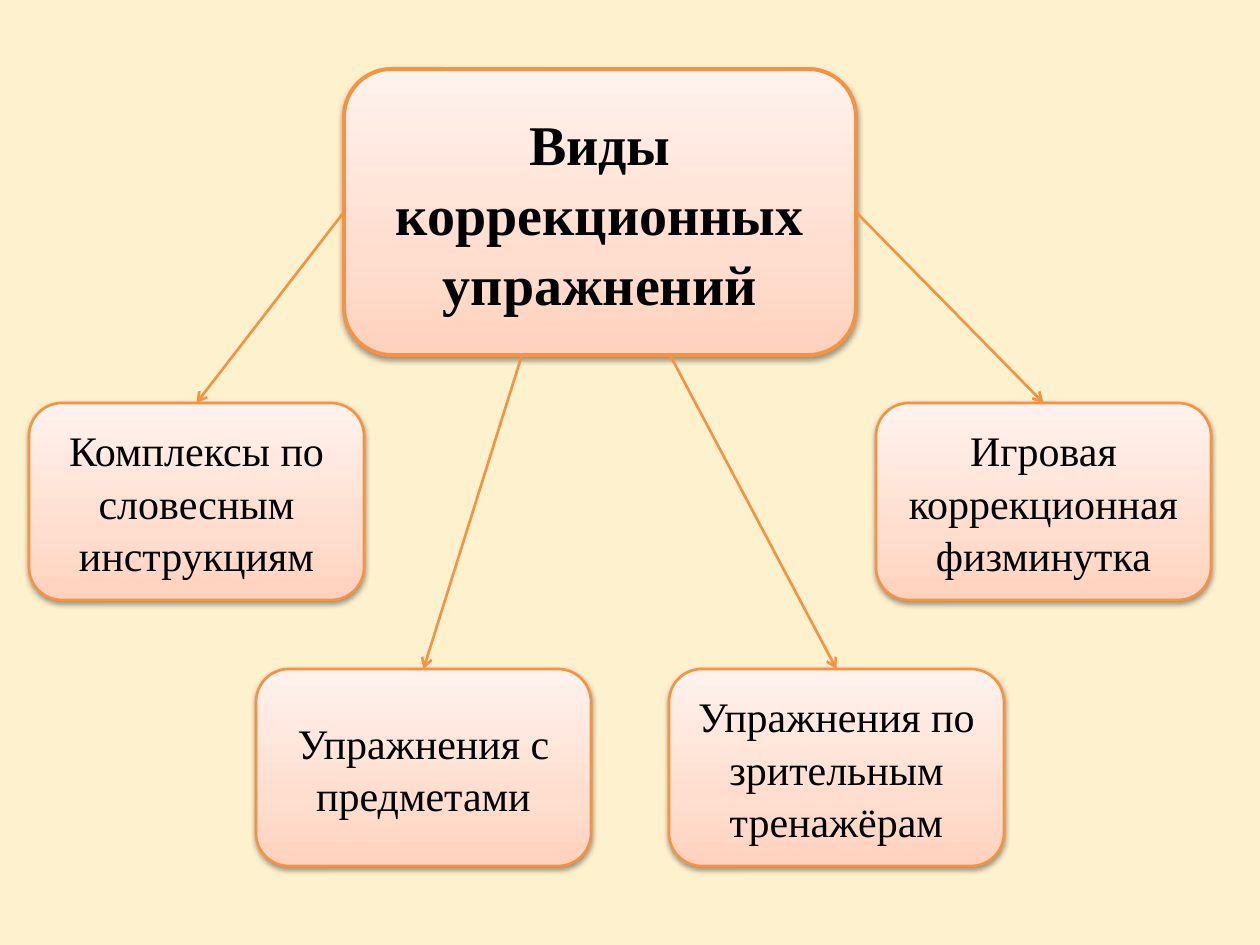
"""Build a slide with a title box and four linked kinds of exercise."""
from copy import deepcopy

from pptx import Presentation
from pptx.dml.color import RGBColor
from pptx.enum.shapes import MSO_CONNECTOR, MSO_SHAPE
from pptx.enum.text import MSO_ANCHOR, PP_ALIGN
from pptx.oxml import parse_xml
from pptx.oxml.ns import nsdecls
from pptx.util import Pt

SCALE = 914400 / 126
HEX = {"back": "FEF1CE", "low": "FFD2BD", "mid": "FFDED0", "high": "FFF2ED",
       "edge": "F69240", "ink": "000000"}
STOPS = [(0, "low"), (0.35, "mid"), (1, "high")]
WIDE, TALL = 335, 197


def emu(px):
    return round(px * SCALE)


def tint(name):
    return RGBColor.from_string(HEX[name])


def apply(target, style):
    for key, value in style.items():
        setattr(target, key, value)


class Board:
    frame = {"word_wrap": True, "vertical_anchor": MSO_ANCHOR.MIDDLE}
    para = {"alignment": PP_ALIGN.CENTER, "line_spacing": 1.04}
    font = {"name": "Times New Roman"}

    def __init__(self, deck):
        self.slide = deck.slides.add_slide(deck.slide_layouts[6])
        fill = self.slide.background.fill
        fill.solid()
        fill.fore_color.rgb = tint("back")

    def edge(self, line, width):
        line.color.rgb = tint("edge")
        line.width = Pt(width)

    def shade(self, shape):
        fill = shape.fill
        fill.gradient()
        fill.gradient_angle = 90
        first = fill.gradient_stops[0]._gs
        first.addnext(deepcopy(first))
        for stop, (place, name) in zip(fill.gradient_stops, STOPS):
            stop.position = place
            stop.color.rgb = tint(name)

    def shadow(self, shape):
        shape.shadow.inherit = False
        shape._element.spPr.find("{*}effectLst").append(parse_xml(
            f'<a:outerShdw {nsdecls("a")} blurRad="40000" dist="20000" '
            f'dir="5400000" rotWithShape="0"><a:srgbClr val="{HEX["ink"]}">'
            '<a:alpha val="38000"/></a:srgbClr></a:outerShdw>'))

    def box(self, text, left, top, wide=WIDE, tall=TALL, size=24, width=1.5,
            bold=False):
        shape = self.slide.shapes.add_shape(
            MSO_SHAPE.ROUNDED_RECTANGLE, *map(emu, (left, top, wide, tall)))
        self.shade(shape)
        self.edge(shape.line, width)
        self.shadow(shape)
        frame = shape.text_frame
        para = frame.paragraphs[0]
        run = para.add_run()
        run.text = text
        apply(frame, self.frame)
        apply(para, self.para)
        apply(run.font, {**self.font, "size": Pt(size), "bold": bold})
        run.font.color.rgb = tint("ink")
        return shape

    def arrow(self, start, goal, side=None, at=(0, 0)):
        line = self.slide.shapes.add_connector(
            MSO_CONNECTOR.STRAIGHT, *map(emu, (*at, *at)))
        if side is not None:
            line.begin_connect(start, side)
        line.end_connect(goal, 0)
        self.edge(line.line, 1.5)
        line.line._get_or_add_ln().append(
            parse_xml(f'<a:tailEnd {nsdecls("a")} type="arrow"/>'))
        line._element.spPr.append(parse_xml(f'<a:effectLst {nsdecls("a")}/>'))


def main():
    deck = Presentation()
    apply(deck, {"slide_width": emu(1260), "slide_height": emu(945)})
    board = Board(deck)
    root = board.box("Виды коррекционных упражнений", 344, 69, 512, 286,
                     size=32, width=2.25, bold=True)
    kinds = [
        ("Упражнения с предметами", 256, 669, {"at": (522, 355)}),
        ("Упражнения по зрительным тренажёрам", 669, 669, {"at": (670, 355)}),
        ("Комплексы по словесным инструкциям", 29, 403, {"side": 1}),
        ("Игровая коррекционная физминутка", 876, 403, {"side": 3}),
    ]
    for text, left, top, start in kinds:
        board.arrow(root, board.box(text, left, top), **start)
    deck.save("out.pptx")


if __name__ == "__main__":
    main()
